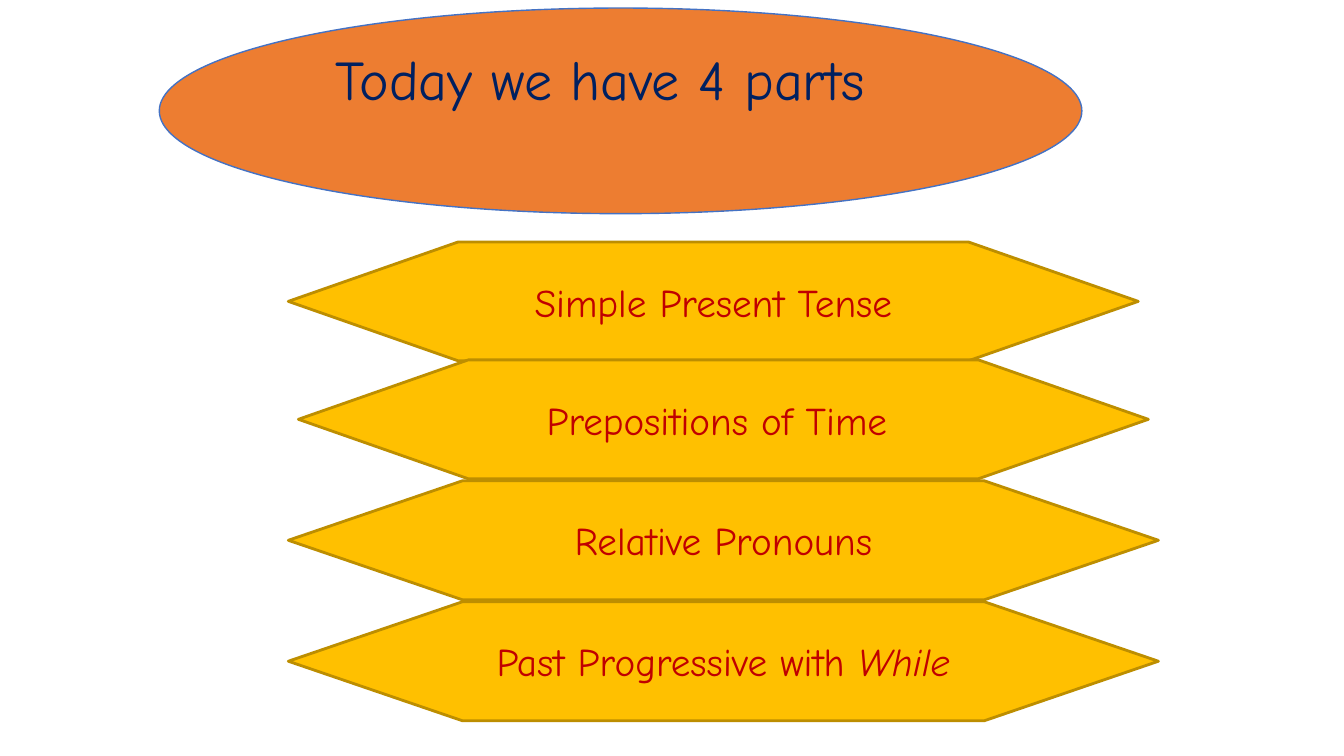
from pptx import Presentation
from pptx.dml.color import RGBColor
from pptx.enum.shapes import MSO_SHAPE
from pptx.enum.text import MSO_ANCHOR, PP_ALIGN
from pptx.util import Inches, Pt

OVAL = MSO_SHAPE.OVAL
HEXAGON = MSO_SHAPE.FLOWCHART_PREPARATION
MIDDLE = MSO_ANCHOR.MIDDLE
LEFT, CENTER = PP_ALIGN.LEFT, PP_ALIGN.CENTER

FONT = "Comic Neue"
INSET = 0.05
PART_HIGH = 1.18

# left, top, width, runs of (text, italic)
PARTS = [
    (2.86, 2.4, 8.43, [("Simple Present Tense", False)]),
    (2.96, 3.57, 8.43, [("Prepositions of Time ", False)]),
    (2.86, 4.77, 8.63, [("Relative Pronouns", False)]),
    (2.86, 5.97, 8.63, [("Past Progressive with ", False), ("While", True)]),
]


def color(code):
    return RGBColor.from_string(code)


def add_shape(slide, kind, box, fill, line, weight):
    shape = slide.shapes.add_shape(kind, *[Inches(n) for n in box])
    shape.shadow.inherit = False
    shape.fill.solid()
    shape.fill.fore_color.rgb = color(fill)
    shape.line.color.rgb = color(line)
    shape.line.width = Pt(weight)
    return shape


def add_text(shape, runs, size, ink, align, left=INSET, bottom=INSET):
    """Write one line of runs; the left and bottom insets shift it."""
    frame = shape.text_frame
    frame.word_wrap = True
    frame.vertical_anchor = MIDDLE
    frame.margin_left, frame.margin_bottom = Inches(left), Inches(bottom)
    frame.margin_top = frame.margin_right = Inches(INSET)
    line = frame.paragraphs[0]
    line.alignment = align
    for text, italic in runs:
        run = line.add_run()
        run.text = text
        run.font.name = FONT
        run.font.size = Pt(size)
        run.font.italic = italic
        run.font.color.rgb = color(ink)


def add_title(slide):
    oval = add_shape(slide, OVAL, (1.58, 0.08, 9.15, 2.04),
                     "ED7D31", "4472C4", 1)
    add_text(oval, [("Today we have 4 parts", False)], 40, "002060",
             LEFT, left=0.41, bottom=0.69)


def add_part(slide, left, top, width, runs):
    part = add_shape(slide, HEXAGON, (left, top, width, PART_HIGH),
                     "FFC000", "BD8E00", 2)
    add_text(part, runs, 28, "C00000", CENTER)


def main():
    deck = Presentation()
    deck.slide_width, deck.slide_height = Inches(13.33), Inches(7.5)
    slide = deck.slides.add_slide(deck.slide_layouts[6])
    add_title(slide)
    for part in PARTS:
        add_part(slide, *part)
    deck.save("out.pptx")


if __name__ == "__main__":
    main()
